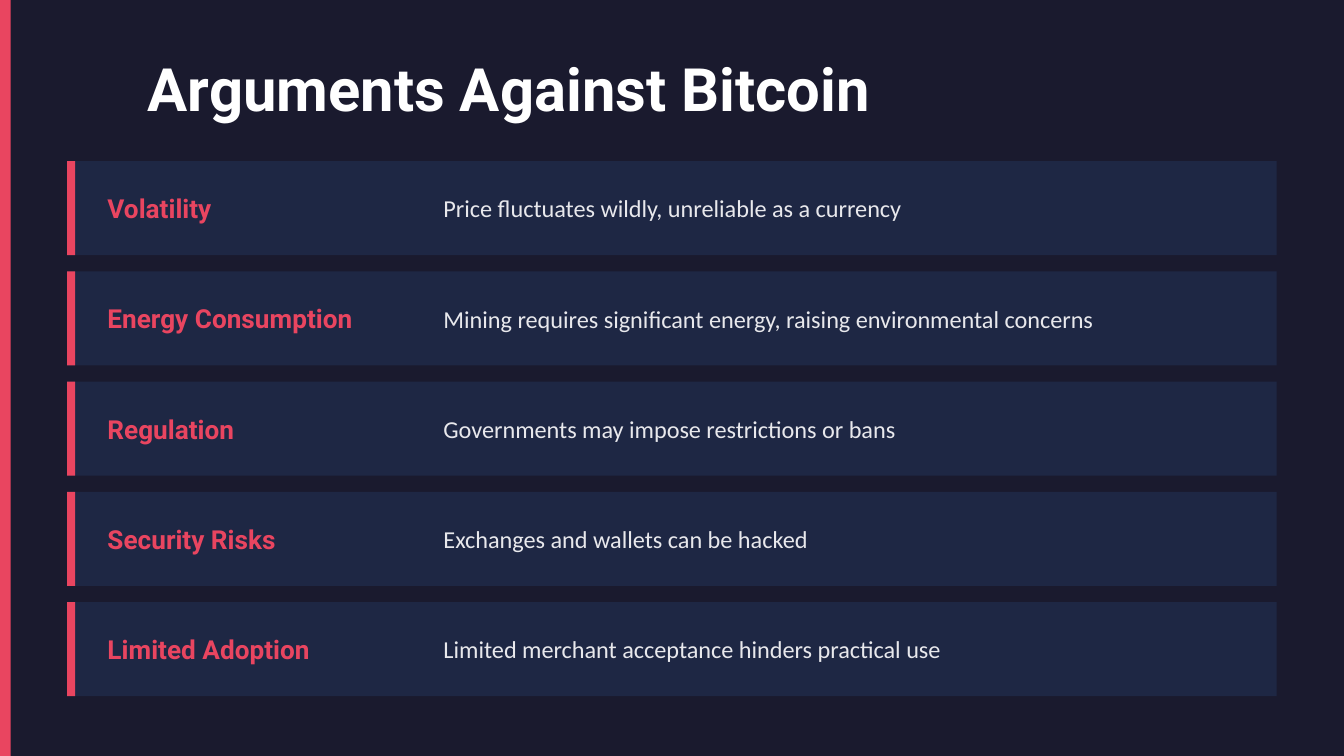
from pptx import Presentation
from pptx.dml.color import RGBColor
from pptx.enum.shapes import MSO_SHAPE
from pptx.enum.text import MSO_ANCHOR
from pptx.util import Emu, Pt

RECTANGLE = MSO_SHAPE.RECTANGLE
MIDDLE = MSO_ANCHOR.MIDDLE

PX = 4572  # EMU per px, 200 px to the inch
SLIDE_W, SLIDE_H = 2000, 1125

NIGHT = RGBColor(0x1A, 0x1A, 0x2E)
NAVY = RGBColor(0x1E, 0x27, 0x44)
RED = RGBColor(0xE9, 0x45, 0x60)
WHITE = RGBColor(0xFF, 0xFF, 0xFF)
PALE = RGBColor(0xE8, 0xE8, 0xEC)

HEADING_FONT = "Roboto"
BODY_FONT = "Calibri"

ARGUMENTS = [
    ("Volatility", "Price fluctuates wildly, unreliable as a currency"),
    ("Energy Consumption",
     "Mining requires significant energy, raising environmental concerns"),
    ("Regulation", "Governments may impose restrictions or bans"),
    ("Security Risks", "Exchanges and wallets can be hacked"),
    ("Limited Adoption", "Limited merchant acceptance hinders practical use"),
]


def px(*lengths):
    return [Emu(length * PX) for length in lengths]


def add_bar(slide, left, top, width, height, color):
    bar = slide.shapes.add_shape(RECTANGLE, *px(left, top, width, height))
    bar.shadow.inherit = False
    bar.fill.solid()
    bar.fill.fore_color.rgb = color
    bar.line.fill.background()


def add_label(slide, left, top, width, height, text, font, size, color, bold=False):
    """Add vertically centred text in a box without margins."""
    label = slide.shapes.add_textbox(*px(left, top, width, height))
    frame = label.text_frame
    frame.word_wrap = True
    frame.vertical_anchor = MIDDLE
    frame.margin_left = frame.margin_top = 0
    frame.margin_right = frame.margin_bottom = 0
    paragraph = frame.paragraphs[0]
    paragraph.text = text
    paragraph.font.name = font
    paragraph.font.size = Pt(size)
    paragraph.font.bold = bold
    paragraph.font.color.rgb = color


def add_argument(slide, left, top, width, height, topic, reason):
    add_bar(slide, left, top, width, height, NAVY)
    add_bar(slide, left, top, 12, height, RED)
    add_label(slide, left + 60, top, 500, height, topic,
              HEADING_FONT, 14, RED, bold=True)
    add_label(slide, left + 560, top, width - 600, height, reason,
              BODY_FONT, 13, PALE)


def add_argument_list(slide, left, top, width, row_height, gap):
    for row, (topic, reason) in enumerate(ARGUMENTS):
        row_top = top + row * (row_height + gap)
        add_argument(slide, left, row_top, width, row_height, topic, reason)


def main():
    deck = Presentation()
    deck.slide_width, deck.slide_height = px(SLIDE_W, SLIDE_H)
    slide = deck.slides.add_slide(deck.slide_layouts[6])
    slide.background.fill.solid()
    slide.background.fill.fore_color.rgb = NIGHT

    add_bar(slide, 0, 0, 16, SLIDE_H, RED)
    add_label(slide, 220, 60, 1600, 140, "Arguments Against Bitcoin",
              HEADING_FONT, 32, WHITE, bold=True)
    add_argument_list(slide, 100, 240, 1800, row_height=140, gap=24)
    deck.save("out.pptx")


if __name__ == "__main__":
    main()
